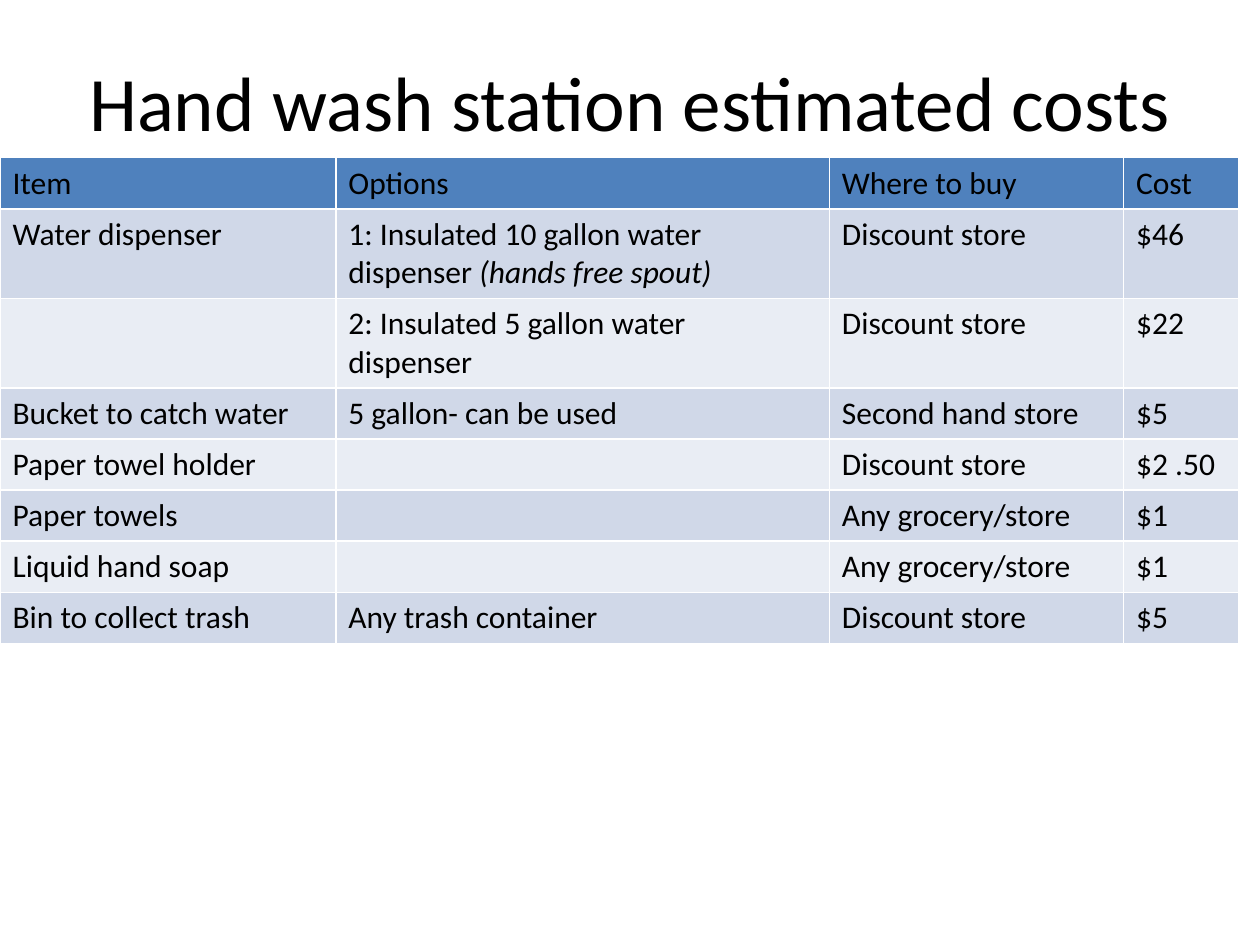
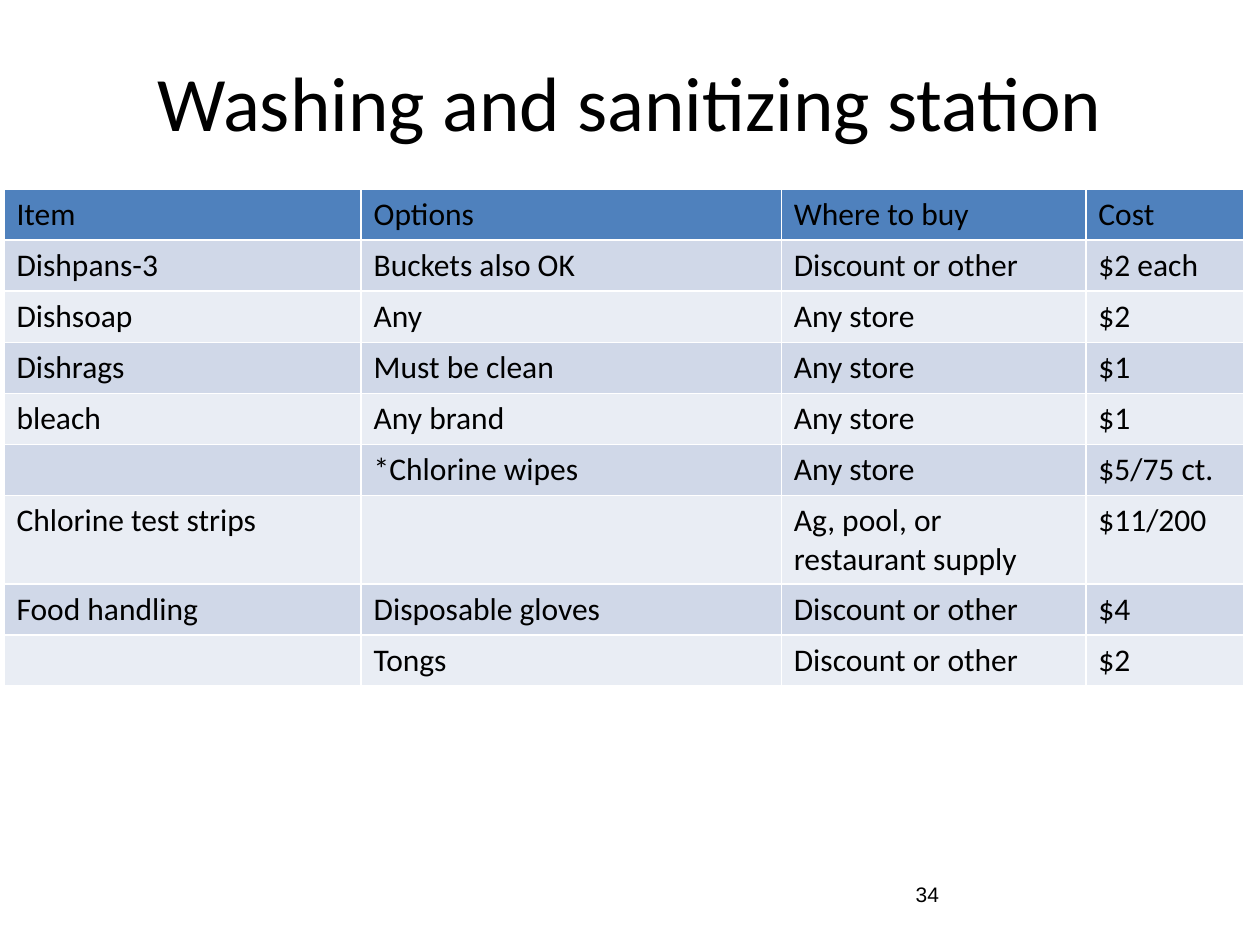
from lxml.etree import SubElement
from pptx import Presentation
from pptx.dml.color import RGBColor
from pptx.enum.text import MSO_ANCHOR, PP_ALIGN
from pptx.oxml.ns import qn
from pptx.util import Cm, Pt

BLACK = RGBColor(0x00, 0x00, 0x00)
WHITE = RGBColor(0xFF, 0xFF, 0xFF)
HEADER_BLUE = RGBColor(0x4F, 0x81, 0xBD)
BANDS = (RGBColor(0xE9, 0xED, 0xF4), RGBColor(0xD0, 0xD8, 0xE8))

TITLE_ONLY = 5
LINE_HEIGHT = 1.03
TWO_LINE_HEIGHT = 1.78
HEADINGS = ("Item", "Options", "Where to buy", "Cost")

HAND_WASH_COSTS = [
    ("Water dispenser", ("1: Insulated 10 gallon water dispenser ", "(hands free spout)"), "Discount store", "$46"),
    ("", "2: Insulated 5 gallon water dispenser", "Discount store", "$22"),
    ("Bucket to catch water", "5 gallon- can be used", "Second hand store", "$5"),
    ("Paper towel holder", "", "Discount store", "$2 .50"),
    ("Paper towels", "", "Any grocery/store", "$1"),
    ("Liquid hand soap", "", "Any grocery/store", "$1"),
    ("Bin to collect trash", "Any trash container", "Discount store", "$5"),
]
SANITIZING_COSTS = [
    ("Dishpans-3", "Buckets also OK", "Discount or other", "$2 each"),
    ("Dishsoap", "Any", "Any store", "$2"),
    ("Dishrags", "Must be clean", "Any store", "$1"),
    ("bleach", "Any brand", "Any store", "$1"),
    ("", "*Chlorine wipes", "Any store", "$5/75 ct."),
    ("Chlorine test strips", "", "Ag, pool, or restaurant supply", "$11/200"),
    ("Food handling", "Disposable gloves", "Discount or other", "$4"),
    ("", "Tongs", "Discount or other", "$2"),
]


def style_font(para, size, name="Calibri"):
    """Give a paragraph its typeface, size and black colour."""
    para.font.name = name
    para.font.size = Pt(size)
    para.font.color.rgb = BLACK


def add_title(page, text, left, width):
    """Place the centred slide title."""
    title = page.shapes.title
    title.left, title.top, title.width, title.height = Cm(left), Cm(0.43), Cm(width), Cm(3.18)
    frame = title.text_frame
    frame.text = text
    frame.vertical_anchor = MSO_ANCHOR.MIDDLE
    para = frame.paragraphs[0]
    para.alignment = PP_ALIGN.CENTER
    style_font(para, 44)


def add_borders(cell):
    """Draw a thin white line on each side of a cell."""
    properties = cell._tc.get_or_add_tcPr()
    for side in ("a:lnL", "a:lnR", "a:lnT", "a:lnB"):
        line = SubElement(properties, qn(side), w=str(Pt(1)))
        fill = SubElement(line, qn("a:solidFill"))
        SubElement(fill, qn("a:srgbClr"), val=str(WHITE))


def fill_cell(cell, content, colour):
    """Write plain text, or text with an italic ending, into a coloured cell."""
    add_borders(cell)
    cell.fill.solid()
    cell.fill.fore_color.rgb = colour
    para = cell.text_frame.paragraphs[0]
    style_font(para, 18)
    if isinstance(content, tuple):
        plain, emphasis = content
        para.add_run().text = plain
        span = para.add_run()
        span.text = emphasis
        span.font.italic = True
    elif content:
        para.add_run().text = content


def add_cost_table(page, left, top, widths, costs, two_line_rows):
    """Build a banded cost table below its heading row."""
    rows = [HEADINGS, *costs]
    heights = [TWO_LINE_HEIGHT if index in two_line_rows else LINE_HEIGHT for index in range(len(rows))]
    frame = page.shapes.add_table(
        len(rows), len(widths), Cm(left), Cm(top), Cm(sum(widths)), Cm(sum(heights))
    )
    table = frame.table
    table.first_row = table.horz_banding = False
    for column, width in zip(table.columns, widths):
        column.width = Cm(width)
    for index, (row, contents) in enumerate(zip(table.rows, rows)):
        row.height = Cm(heights[index])
        colour = BANDS[index % 2] if index else HEADER_BLUE
        for cell, content in zip(row.cells, contents):
            fill_cell(cell, content, colour)


def add_page_number(page, number):
    """Write the page number at the lower right."""
    box = page.shapes.add_textbox(Cm(18.21), Cm(17.65), Cm(5.92), Cm(1.02))
    box.text_frame.word_wrap = True
    box.text_frame.text = number
    style_font(box.text_frame.paragraphs[0], 12, "Arial")


def add_page(deck):
    """Add a title-only page on a white background."""
    page = deck.slides.add_slide(deck.slide_layouts[TITLE_ONLY])
    page.background.fill.solid()
    page.background.fill.fore_color.rgb = WHITE
    return page


def main():
    """Build and save both cost pages."""
    deck = Presentation()
    deck.slide_width, deck.slide_height = Cm(25.4), Cm(19.05)

    page = add_page(deck)
    add_title(page, "Hand wash station estimated costs", 1.27, 22.86)
    add_cost_table(page, 0, 3.18, (6.77, 9.95, 5.93, 2.33), HAND_WASH_COSTS, {1, 2})

    page = add_page(deck)
    add_title(page, "Washing and sanitizing station", 0, 25.4)
    add_page_number(page, "34")
    add_cost_table(page, 0.08, 3.81, (7.2, 8.47, 6.14, 3.18), SANITIZING_COSTS, {6})

    deck.save("out.pptx")


if __name__ == "__main__":
    main()
